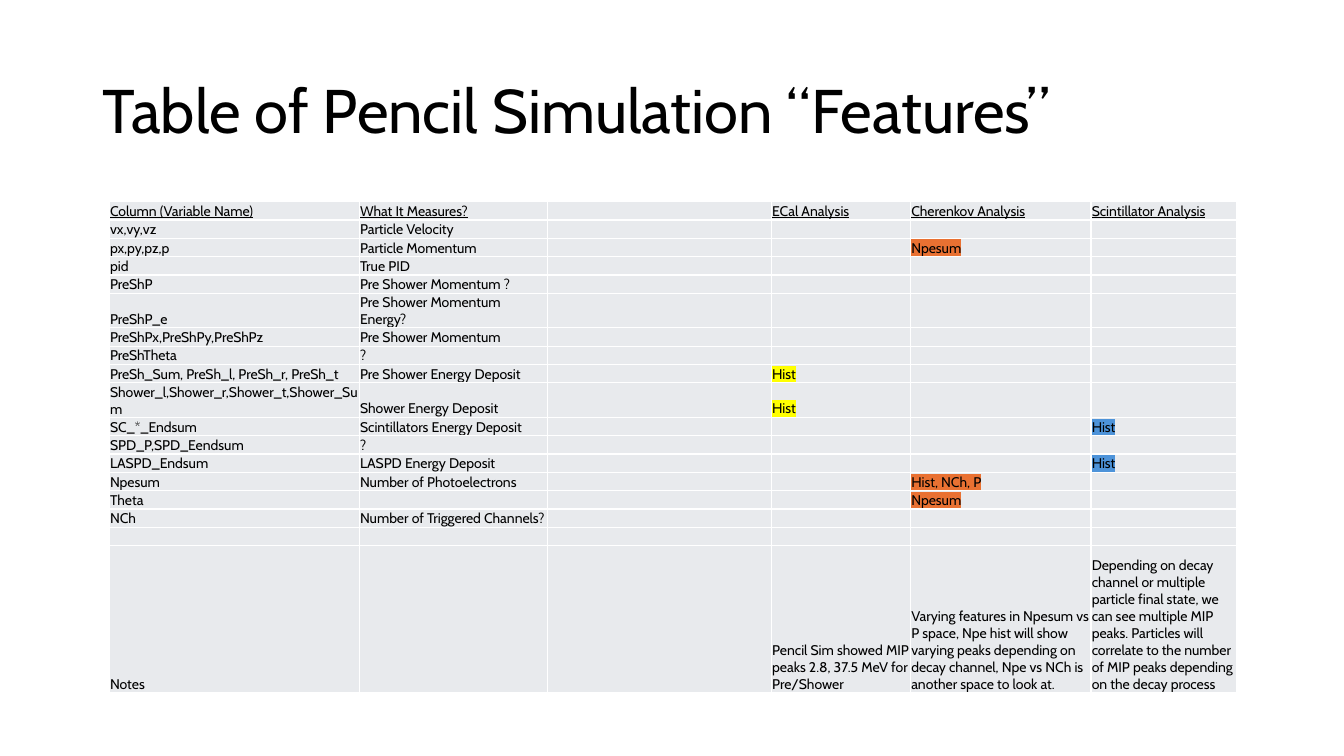
from dataclasses import dataclass

from lxml import etree
from pptx import Presentation
from pptx.dml.color import RGBColor
from pptx.enum import text
from pptx.oxml import ns
from pptx.util import Pt


@dataclass(frozen=True)
class Theme:
    font: str = "Cabin"
    ink: str = "000000"
    cell: str = "E8EAED"
    border: str = "FFFFFF"
    ecal: str = "FFFF00"
    cherenkov: str = "E97132"
    scintillator: str = "4D93D9"
    title_size: float = 44
    body_size: float = 10


THEME = Theme()

COLUMN_WIDTHS = [178.6, 134.6, 159.8, 99.4, 128.9, 103.7]
ROW_HEIGHT = 13.1
NOTES_HEIGHT = 105.1

HEADER = ["Column (Variable Name)", "What It Measures?", "",
          "ECal Analysis", "Cherenkov Analysis", "Scintillator Analysis"]
# variable, meaning, ECal, Cherenkov, Scintillator
FEATURES = [
    ("vx,vy,vz", "Particle Velocity", "", "", ""),
    ("px,py,pz,p", "Particle Momentum", "", "Npesum", ""),
    ("pid", "True PID", "", "", ""),
    ("PreShP", "Pre Shower Momentum ?", "", "", ""),
    ("PreShP_e", "Pre Shower Momentum Energy?", "", "", ""),
    ("PreShPx,PreShPy,PreShPz", "Pre Shower Momentum", "", "", ""),
    ("PreShTheta", "?", "", "", ""),
    ("PreSh_Sum, PreSh_l, PreSh_r, PreSh_t", "Pre Shower Energy Deposit", "Hist", "", ""),
    ("Shower_l,Shower_r,Shower_t,Shower_Sum", "Shower Energy Deposit", "Hist", "", ""),
    ("SC_*_Endsum", "Scintillators Energy Deposit", "", "", "Hist"),
    ("SPD_P,SPD_Eendsum", "?", "", "", ""),
    ("LASPD_Endsum", "LASPD Energy Deposit", "", "", "Hist"),
    ("Npesum", "Number of Photoelectrons", "", "Hist, NCh, P", ""),
    ("Theta", "", "", "Npesum", ""),
    ("NCh", "Number of Triggered Channels?", "", "", ""),
    ("", "", "", "", ""),
]
NOTES = [
    "Notes", "", "",
    "Pencil Sim showed MIP peaks 2.8, 37.5 MeV for Pre/Shower",
    "Varying features in Npesum vs P space, Npe hist will show varying peaks "
    "depending on decay channel, Npe vs NCh is another space to look at.",
    "Depending on decay channel or multiple particle final state, we can see "
    "multiple MIP peaks. Particles will correlate to the number of MIP peaks "
    "depending on the decay process",
]
HIGHLIGHTS = [None, None, None, THEME.ecal, THEME.cherenkov, THEME.scintillator]


def color_element(tag, color):
    element = etree.Element(ns.qn(tag))
    etree.SubElement(element, ns.qn("a:srgbClr"), val=color)
    return element


def write(para, words, size=THEME.body_size, underline=None, highlight=None):
    if not words:
        # An empty paragraph takes its height from its end mark.
        etree.SubElement(para._p, ns.qn("a:endParaRPr"), sz=str(int(size * 100)))
        return
    span = para.add_run()
    span.text = words
    span.font.size = Pt(size)
    span.font.name = THEME.font
    span.font.underline = underline
    span.font.color.rgb = RGBColor.from_string(THEME.ink)
    if highlight:
        fill = span.font._element.find(ns.qn("a:solidFill"))
        fill.addnext(color_element("a:highlight", highlight))


def set_borders(cell, color=THEME.border, width=1):
    properties = cell._tc.get_or_add_tcPr()
    for position, side in enumerate("LRTB"):
        line = etree.Element(ns.qn(f"a:ln{side}"), w=str(Pt(width)))
        line.append(color_element("a:solidFill", color))
        properties.insert(position, line)


def fill_cell(cell, words, **style):
    cell.margin_left = cell.margin_right = cell.margin_top = Pt(0.6)
    cell.margin_bottom = Pt(0)
    cell.vertical_anchor = text.MSO_ANCHOR.BOTTOM
    cell.fill.solid()
    cell.fill.fore_color.rgb = RGBColor.from_string(THEME.cell)
    set_borders(cell)
    write(cell.text_frame.paragraphs[0], words, **style)


def add_title(page, words):
    box = page.shapes.add_textbox(Pt(66), Pt(28.8), Pt(828), Pt(104.4))
    box.text_frame.word_wrap = True
    box.text_frame.vertical_anchor = text.MSO_ANCHOR.MIDDLE
    para = box.text_frame.paragraphs[0]
    para.line_spacing = 0.9
    write(para, words, size=THEME.title_size)


def add_feature_table(page):
    features = [[name, meaning, "", *analyses] for name, meaning, *analyses in FEATURES]
    rows = [HEADER, *features, NOTES]
    heights = [ROW_HEIGHT] * (len(rows) - 1) + [NOTES_HEIGHT]
    table = page.shapes.add_table(
        len(rows), len(HEADER), Pt(78), Pt(144),
        Pt(sum(COLUMN_WIDTHS)), Pt(sum(heights))).table
    for column, width in zip(table.columns, COLUMN_WIDTHS):
        column.width = Pt(width)
    for row, height, values in zip(table.rows, heights, rows):
        row.height = Pt(height)
        for cell, words, highlight in zip(row.cells, values, HIGHLIGHTS):
            fill_cell(cell, words,
                      underline=True if values is HEADER else None,
                      highlight=highlight if values in features else None)


def main():
    deck = Presentation()
    deck.slide_width, deck.slide_height = Pt(960), Pt(540)
    page = deck.slides.add_slide(deck.slide_layouts[6])
    add_title(page, "Table of Pencil Simulation “Features”")
    add_feature_table(page)
    deck.save("out.pptx")


if __name__ == "__main__":
    main()
